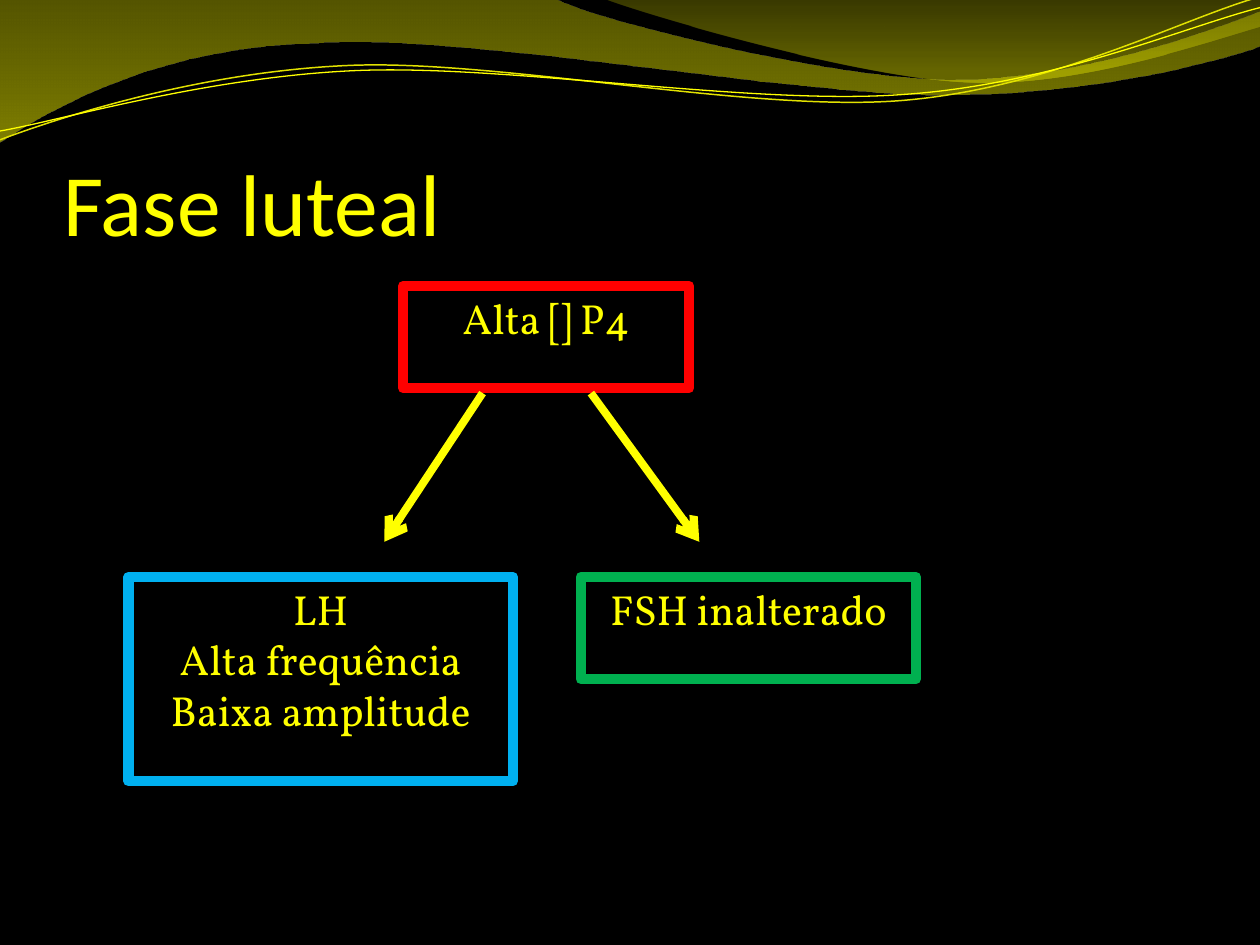
from dataclasses import dataclass
from math import cos, radians, sin

from lxml.etree import SubElement
from pptx import Presentation
from pptx.dml.color import RGBColor
from pptx.enum.shapes import MSO_CONNECTOR, MSO_SHAPE
from pptx.enum.text import MSO_ANCHOR, MSO_AUTO_SIZE, PP_ALIGN
from pptx.oxml.ns import qn
from pptx.util import Inches, Pt


@dataclass(frozen=True)
class Theme:
    background: str = "000000"
    text: str = "FFFF00"
    soft_line: str = "E1E100"
    shade: str = "BDBD00"
    glow: str = "E7E700"
    hormone: str = "FF0000"
    pulse: str = "00B0F0"
    steady: str = "00B050"
    title_font: str = "Calibri"
    body_font: str = "Vollkorn"
    title_size: int = 50
    body_size: int = 24


theme = Theme()


def add_curve(shapes, place, segments, rotation, close):
    left, top, width, height = place
    builder = shapes.build_freeform(0, 0)
    builder.add_line_segments([(Inches(width), Inches(height))], close=False)
    curve = builder.convert_to_shape()
    curve.left, curve.top, curve.width, curve.height = map(Inches, place)
    curve.rotation = rotation
    curve.shadow.inherit = False
    outline = next(curve._element.iter(qn("a:pathLst")))[0]
    for old_step in list(outline):
        outline.remove(old_step)
    cosine, sine = cos(radians(rotation)), sin(radians(rotation))
    for index, segment in enumerate(segments):
        kind = "a:moveTo" if index == 0 else "a:lnTo" if len(segment) == 2 else "a:cubicBezTo"
        step = SubElement(outline, qn(kind))
        for x, y in zip(segment[::2], segment[1::2]):
            across, down = x - left - width / 2, y - top - height / 2
            SubElement(
                step, qn("a:pt"),
                x=str(Inches(width / 2 + across * cosine + down * sine)),
                y=str(Inches(height / 2 - across * sine + down * cosine)),
            )
    if close:
        SubElement(outline, qn("a:close"))
    return curve


def write_text(para, text, font, size, alignment):
    para.alignment = alignment
    span = para.add_run()
    span.text = text
    span.font.name = font
    span.font.size = Pt(size)
    span.font.color.rgb = RGBColor.from_string(theme.text)


deck = Presentation()
deck.slide_width = Inches(10)
deck.slide_height = Inches(7.5)
page = deck.slides.add_slide(deck.slide_layouts[5])
page.background.fill.solid()
page.background.fill.fore_color.rgb = RGBColor.from_string(theme.background)

waves = [
    ((-0.01, -0.01, 10.02, 1.14), [
        (0, 0),
        (4.4, -0.01),
        (4.76, 0.17, 6.64, 0.63, 7.58, 0.63),
        (8.53, 0.63, 9.58, 0.26, 10, 0.09),
        (10.01, 0.36),
        (9.83, 0.44, 8.7, 0.76, 7.46, 0.75),
        (6.22, 0.75, 3.82, 0.28, 2.57, 0.34),
        (1.29, 0.36, 0.46, 0.83, -0.01, 1.13),
        (0, 0),
    ], [(0, theme.shade, 45), (100, theme.glow, 55)]),
    ((4.79, -0.01, 5.21, 0.7), [
        (4.79, -0.01),
        (5.09, 0.11, 6.82, 0.62, 7.69, 0.65),
        (8.56, 0.69, 9.61, 0.32, 10, 0.21),
        (10, 0),
        (4.79, -0.01),
    ], [(0, theme.shade, 30), (80, theme.soft_line, 45)]),
]
for place, segments, stops in waves:
    wave = add_curve(page.shapes, place, segments, 0, True)
    wave.line.fill.background()
    wave.fill.gradient()
    wave.fill.gradient_angle = 270
    stop_list = next(wave._element.iter(qn("a:gsLst")))
    for old_stop in list(stop_list):
        stop_list.remove(old_stop)
    for position, color, opacity in stops:
        stop = SubElement(stop_list, qn("a:gs"), pos=str(position * 1000))
        stop_color = SubElement(stop, qn("a:srgbClr"), val=color)
        SubElement(stop_color, qn("a:alpha"), val=str(opacity * 1000))

ripples = [
    ((-0.02, 0.22, 10.02, 0.71), [
        (0, 1.11),
        (0.48, 0.93, 1.58, 0.57, 2.77, 0.52),
        (3.95, 0.47, 5.93, 0.89, 7.13, 0.8),
        (8.33, 0.71, 9.38, 0.15, 9.98, -0.02),
    ], theme.soft_line, 0.85),
    ((-0.02, 0.3, 10.03, 0.58), [
        (0, 1.04),
        (0.47, 0.96, 1.64, 0.61, 2.83, 0.56),
        (4.03, 0.51, 5.97, 0.84, 7.17, 0.75),
        (8.36, 0.67, 9.41, 0.21, 10, 0.06),
    ], theme.text, 0.75),
]
for place, segments, color, width in ripples:
    ripple = add_curve(page.shapes, place, segments, 357.3, False)
    ripple.fill.background()
    ripple.line.color.rgb = RGBColor.from_string(color)
    ripple.line.width = Pt(width)

title = page.shapes.title
page.shapes._spTree.append(title._element)
title.left, title.top, title.width, title.height = map(Inches, (0.5, 0.77, 9, 1.25))
frame = title.text_frame
frame.auto_size = MSO_AUTO_SIZE.NONE
frame.vertical_anchor = MSO_ANCHOR.BOTTOM
frame.margin_left = frame.margin_right = frame.margin_bottom = 0
frame.margin_top = Inches(0.05)
write_text(frame.paragraphs[0], "Fase luteal", theme.title_font, theme.title_size, PP_ALIGN.LEFT)

boxes = [
    ((3.2, 2.27, 2.27, 0.81), theme.hormone, ["Alta [] P4"]),
    ((1.02, 4.58, 3.05, 1.62), theme.pulse, ["LH", "Alta frequência", "Baixa amplitude"]),
    ((4.61, 4.58, 2.66, 0.81), theme.steady, ["FSH inalterado"]),
]
for place, color, lines in boxes:
    box = page.shapes.add_shape(MSO_SHAPE.RECTANGLE, *map(Inches, place))
    box.shadow.inherit = False
    box.fill.background()
    box.line.color.rgb = RGBColor.from_string(color)
    box.line.width = Pt(6)
    frame = box.text_frame
    frame.word_wrap = True
    frame.vertical_anchor = MSO_ANCHOR.TOP
    for index, line in enumerate(lines):
        para = frame.add_paragraph() if index else frame.paragraphs[0]
        write_text(para, line, theme.body_font, theme.body_size, PP_ALIGN.CENTER)

for start_x, end_x in [(3.83, 3.05), (4.69, 5.55)]:
    arrow = page.shapes.add_connector(
        MSO_CONNECTOR.STRAIGHT, Inches(start_x), Inches(3.12), Inches(end_x), Inches(4.3)
    )
    arrow.line.color.rgb = RGBColor.from_string(theme.text)
    arrow.line.width = Pt(4.5)
    properties = arrow._element.spPr
    SubElement(properties.find(qn("a:ln")), qn("a:tailEnd"), type="arrow")
    SubElement(properties, qn("a:effectLst"))

deck.save("out.pptx")
